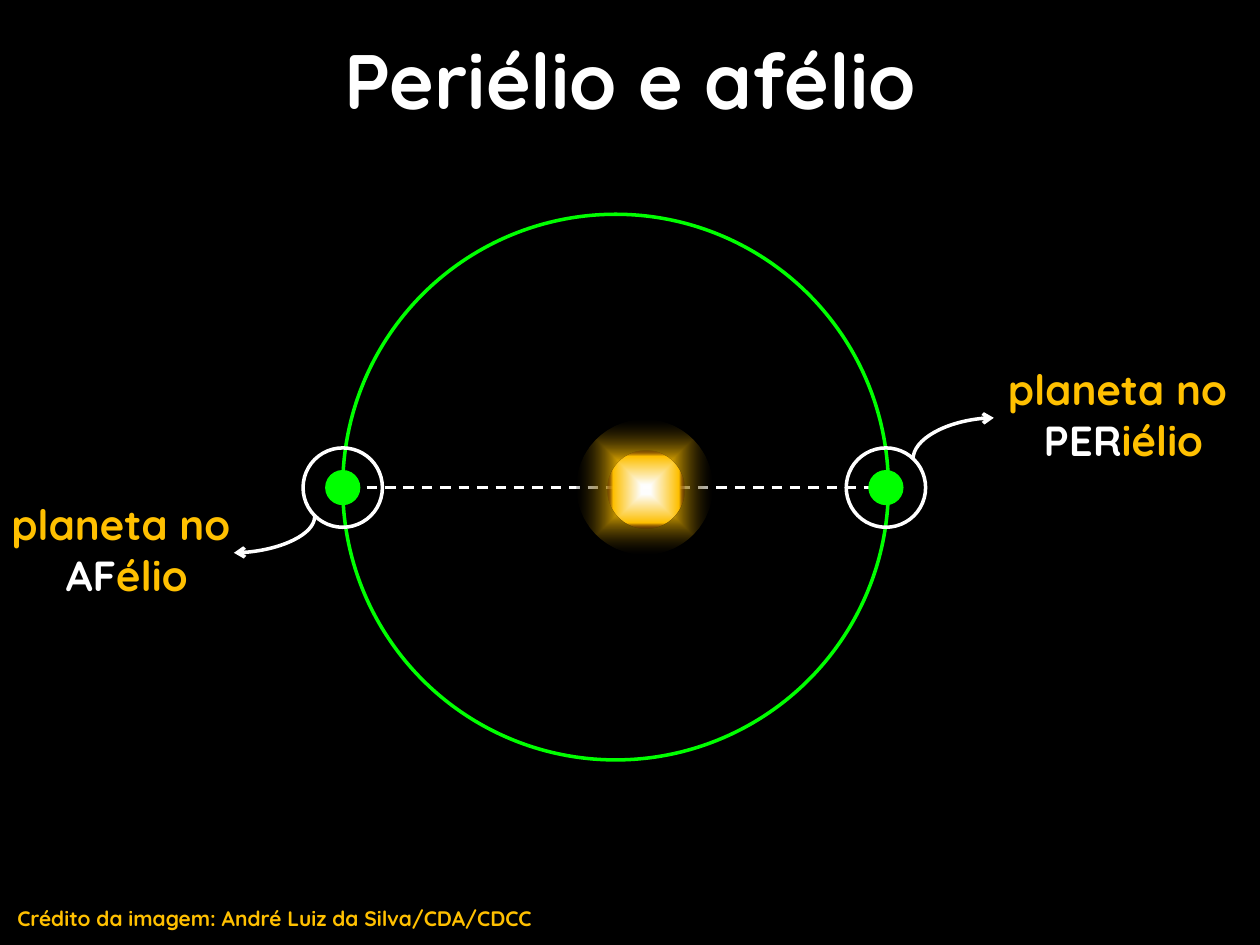
from lxml import etree
from pptx import Presentation
from pptx.dml.color import RGBColor
from pptx.enum.dml import MSO_LINE
from pptx.enum.shapes import MSO_CONNECTOR, MSO_SHAPE
from pptx.enum.text import MSO_ANCHOR, PP_ALIGN
from pptx.oxml.ns import qn
from pptx.util import Cm, Pt

STRAIGHT, CURVE = MSO_CONNECTOR.STRAIGHT, MSO_CONNECTOR.CURVE
OVAL, DASH, TOP = MSO_SHAPE.OVAL, MSO_LINE.DASH, MSO_ANCHOR.TOP
LEFT, CENTER = PP_ALIGN.LEFT, PP_ALIGN.CENTER

FONT = "Quicksand"
BLACK, WHITE, GOLD, GREEN = "000000", "FFFFFF", "FFC000", "00FF00"
AXIS_Y = 9.83
ORBIT = (12.41, 9.82, 11)
AXIS = (6.65, 18.11)
PLANET_SIZE, RING_SIZE = 0.71, 1.6

TITLE = [[("Periélio e afélio", WHITE)]]
CREDIT = [[("Crédito da imagem: André Luiz da Silva/CDA/CDCC", GOLD)]]
PERIHELION = {
    "x": 17.86,
    "label": [[("planeta no ", GOLD)], [("PER", WHITE), ("iélio", GOLD)]],
    "label_at": (19.38, 7.21),
    "arrow": (19.64, 9.66, 18.8, 8.03),
}
APHELION = {
    "x": 6.91,
    "label": [[("planeta no ", GOLD)], [("AF", WHITE), ("élio", GOLD)]],
    "label_at": (-0.71, 9.93),
    "arrow": (5.16, 9.96, 5.9, 11.59),
}
SUN = [
    (13, 9.82, 2.73, [(7, WHITE, 100), (32, GOLD, 100), (100, BLACK, 23)]),
    (13.02, 9.87, 1.55, [(12, WHITE, 100), (85, GOLD, 100), (100, "4D0808", 17)]),
]


def color(value):
    return RGBColor.from_string(value)


def add_text(page, paragraphs, at, size, align=CENTER):
    box = page.shapes.add_textbox(*map(Cm, at))
    frame = box.text_frame
    frame.word_wrap = True
    frame.vertical_anchor = TOP
    for index, spans in enumerate(paragraphs):
        para = frame.add_paragraph() if index else frame.paragraphs[0]
        para.alignment = align
        for text, tint in spans:
            span = para.add_run()
            span.text = text
            span.font.name = FONT
            span.font.size = Pt(size)
            span.font.bold = True
            span.font.color.rgb = color(tint)


def add_circle(shapes, x, y, size, fill=None, line=None):
    circle = shapes.add_shape(OVAL, Cm(x - size / 2), Cm(y - size / 2), Cm(size), Cm(size))
    circle.shadow.inherit = False
    if fill:
        circle.fill.solid()
        circle.fill.fore_color.rgb = color(fill)
    else:
        circle.fill.background()
    if line:
        circle.line.color.rgb = color(line)
        circle.line.width = Pt(2)
    else:
        circle.line.fill.background()
    return circle


def add_glow(shapes, x, y, size, stops):
    properties = add_circle(shapes, x, y, size)._element.spPr
    gradient = etree.Element(qn("a:gradFill"), rotWithShape="1")
    stop_list = etree.SubElement(gradient, qn("a:gsLst"))
    for position, tint, opacity in stops:
        stop = etree.SubElement(stop_list, qn("a:gs"), pos=str(position * 1000))
        shade = etree.SubElement(stop, qn("a:srgbClr"), val=tint)
        if opacity < 100:
            etree.SubElement(shade, qn("a:alpha"), val=str(opacity * 1000))
    outline = etree.SubElement(gradient, qn("a:path"), path="shape")
    center = dict.fromkeys("ltrb", "50000")
    etree.SubElement(outline, qn("a:fillToRect"), **center)
    properties.replace(properties.find(qn("a:noFill")), gradient)


def add_line(page, kind, ends, width):
    line = page.shapes.add_connector(kind, *map(Cm, ends))
    line.line.color.rgb = color(WHITE)
    line.line.width = Pt(width)
    etree.SubElement(line._element.spPr, qn("a:effectLst"))
    return line


def add_arrow(page, ends):
    arrow = add_line(page, CURVE, ends, 2)
    properties = arrow._element.spPr
    properties.find(qn("a:xfrm")).set("rot", "5400000")
    properties.find(qn("a:prstGeom")).set("prst", "curvedConnector2")
    etree.SubElement(properties.find(qn("a:ln")), qn("a:tailEnd"), type="arrow")


def add_planet(page, x):
    add_circle(page.shapes, x, AXIS_Y, PLANET_SIZE, fill=GREEN)


def add_callout(page, point):
    add_circle(page.shapes, point["x"], AXIS_Y, RING_SIZE, line=WHITE)
    add_arrow(page, point["arrow"])
    add_text(page, point["label"], (*point["label_at"], 6.53, 2.31), 24)


def main():
    deck = Presentation()
    deck.slide_width, deck.slide_height = Cm(25.4), Cm(19.05)
    page = deck.slides.add_slide(deck.slide_layouts[6])
    page.background.fill.solid()
    page.background.fill.fore_color.rgb = color(BLACK)

    axis = add_line(page, STRAIGHT, (AXIS[0], AXIS_Y, AXIS[1], AXIS_Y), 1.5)
    axis.line.dash_style = DASH
    add_circle(page.shapes, *ORBIT, line=GREEN)
    add_planet(page, PERIHELION["x"])
    add_text(page, TITLE, (1.91, 0.53, 21.59, 4.09), 44)
    for point in (PERIHELION, APHELION):
        add_callout(page, point)
    sun = page.shapes.add_group_shape()
    for layer in SUN:
        add_glow(sun.shapes, *layer)
    add_planet(page, APHELION["x"])
    add_text(page, CREDIT, (0.1, 18.14, 13.41, 0.76), 12, LEFT)
    deck.save("out.pptx")


if __name__ == "__main__":
    main()
